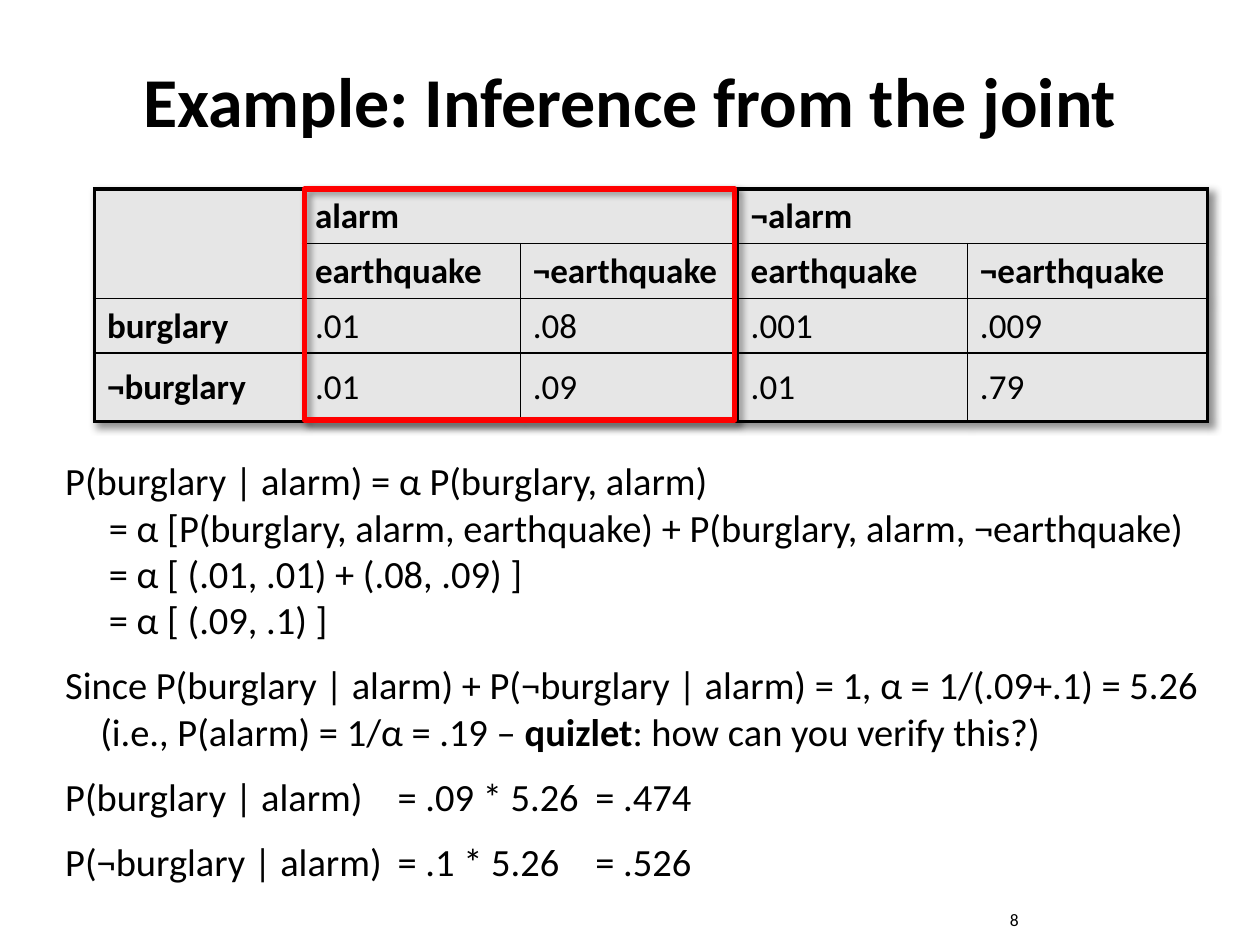
from lxml.etree import SubElement
from pptx import Presentation
from pptx.dml.color import RGBColor
from pptx.enum.shapes import MSO_SHAPE
from pptx.enum.text import MSO_ANCHOR, PP_ALIGN
from pptx.oxml import parse_xml
from pptx.oxml.ns import qn
from pptx.util import Pt

BLACK, RED, GREY = "000000", "FF0000", "E6E6E6"
FONT = "Calibri"
NAMESPACE = "http://schemas.openxmlformats.org/drawingml/2006/main"

COLUMN_WIDTHS = [118.8, 124.5, 124.5, 131, 137.2]
ROW_HEIGHTS = [31, 31, 31, 39]
JOINT = [
    ["", "alarm", "", "¬alarm", ""],
    ["", "earthquake", "¬earthquake", "earthquake", "¬earthquake"],
    ["burglary", ".01", ".08", ".001", ".009"],
    ["¬burglary", ".01", ".09", ".01", ".79"],
]
HEADER_ROWS = 2
MERGES = [((0, 0), (1, 0)), ((0, 1), (0, 2)), ((0, 3), (0, 4))]

# Each line: left indent, space before, text pieces (odd pieces are bold)
DERIVATION = [
    (0, 0, ["P(burglary | alarm) = α P(burglary, alarm)"]),
    (25, 0, ["= α [P(burglary, alarm, earthquake) + P(burglary, alarm, ¬earthquake)"]),
    (25, 0, ["= α [ (.01, .01) + (.08, .09) ]"]),
    (25, 0, ["= α [ (.09, .1) ]"]),
    (0, 11, ["Since P(burglary | alarm) + P(¬burglary | alarm) = 1, α = 1/(.09+.1) = 5.26"]),
    (20, 0, ["(i.e., P(alarm) = 1/α = .19 – ", "quizlet", ": how can you verify this?)"]),
    (0, 11, ["P(burglary | alarm)\t= .09 * 5.26\t= .474"]),
    (0, 11, ["P(¬burglary | alarm)\t= .1 * 5.26\t= .526"]),
]
EQUALS_STOPS = [190, 303]


def color(hex_string):
    return RGBColor.from_string(hex_string)


def add_span(para, text, size=22, bold=False, fill=BLACK, align=PP_ALIGN.LEFT):
    para.alignment = align
    span = para.add_run()
    span.text = text
    span.font.name = FONT
    span.font.size = Pt(size)
    span.font.bold = bold
    span.font.color.rgb = color(fill)


def add_box(page, left, top, width, height, anchor=MSO_ANCHOR.TOP):
    box = page.shapes.add_textbox(Pt(left), Pt(top), Pt(width), Pt(height))
    box.text_frame.word_wrap = True
    box.text_frame.vertical_anchor = anchor
    return box.text_frame


def shadow_effect():
    return parse_xml(
        f'<a:effectLst xmlns:a="{NAMESPACE}">'
        f'<a:outerShdw blurRad="{Pt(4)}" dist="{Pt(3)}" dir="2700000" algn="tl" rotWithShape="0">'
        f'<a:srgbClr val="{BLACK}"><a:alpha val="43000"/></a:srgbClr>'
        '</a:outerShdw></a:effectLst>'
    )


def set_border(cell, side, width):
    properties = cell._tc.get_or_add_tcPr()
    line = SubElement(properties, qn(f"a:ln{side}"), w=str(Pt(width)))
    fill = SubElement(line, qn("a:solidFill"))
    SubElement(fill, qn("a:srgbClr"), val=BLACK)


def style_cell(cell, row, column):
    """Draw thick borders on the table's outer edge and thin ones inside."""
    outer = {
        "L": column == 0,
        "R": column + cell.span_width == len(COLUMN_WIDTHS),
        "T": row == 0,
        "B": row + cell.span_height == len(ROW_HEIGHTS),
    }
    for side, is_outer in outer.items():
        set_border(cell, side, 2.25 if is_outer else 1)
    cell.fill.solid()
    cell.fill.fore_color.rgb = color(GREY)
    cell.vertical_anchor = MSO_ANCHOR.MIDDLE


def add_joint_table(page, left, top):
    frame = page.shapes.add_table(
        len(ROW_HEIGHTS), len(COLUMN_WIDTHS), Pt(left), Pt(top),
        Pt(sum(COLUMN_WIDTHS)), Pt(sum(ROW_HEIGHTS)))
    table = frame.table
    table.first_row = table.horz_banding = False
    table._tbl.tblPr.insert(0, shadow_effect())
    for column, width in zip(table.columns, COLUMN_WIDTHS):
        column.width = Pt(width)
    for row, height in zip(table.rows, ROW_HEIGHTS):
        row.height = Pt(height)
    for first, last in MERGES:
        table.cell(*first).merge(table.cell(*last))
    for row, texts in enumerate(JOINT):
        for column, text in enumerate(texts):
            cell = table.cell(row, column)
            style_cell(cell, row, column)
            if text:
                add_span(cell.text_frame.paragraphs[0], text, size=20,
                         bold=row < HEADER_ROWS or column == 0)


def add_highlight(page, left, top, width, height):
    frame = page.shapes.add_shape(
        MSO_SHAPE.RECTANGLE, Pt(left), Pt(top), Pt(width), Pt(height))
    frame.fill.background()
    frame.line.color.rgb = color(RED)
    frame.line.width = Pt(3)
    frame._element.spPr.append(shadow_effect())


def add_tab_stops(para, positions):
    stops = SubElement(para._p.get_or_add_pPr(), qn("a:tabLst"))
    for position in positions:
        SubElement(stops, qn("a:tab"), pos=str(Pt(position)), algn="l")


def add_derivation(page):
    frame = add_box(page, 30.2, 257.8, 678.2, 260.6)
    for number, (indent, gap, pieces) in enumerate(DERIVATION):
        para = frame.add_paragraph() if number else frame.paragraphs[0]
        para.space_before = Pt(gap)
        para._p.get_or_add_pPr().set("marL", str(Pt(indent)))
        if "\t" in pieces[0]:
            add_tab_stops(para, EQUALS_STOPS)
        for index, piece in enumerate(pieces):
            add_span(para, piece, bold=index % 2 == 1)


def main():
    deck = Presentation()
    deck.slide_width, deck.slide_height = Pt(720), Pt(540)
    page = deck.slides.add_slide(deck.slide_layouts[6])

    number = add_box(page, 570, 516, 150, 24)
    add_span(number.paragraphs[0], "8", size=10)
    title = add_box(page, 54, 12, 612, 90, anchor=MSO_ANCHOR.MIDDLE)
    add_span(title.paragraphs[0], "Example: Inference from the joint",
             size=40, bold=True, align=PP_ALIGN.CENTER)
    add_joint_table(page, 54, 108)
    add_derivation(page)
    add_highlight(page, 174, 108, 246, 132)
    deck.save("out.pptx")


if __name__ == "__main__":
    main()
